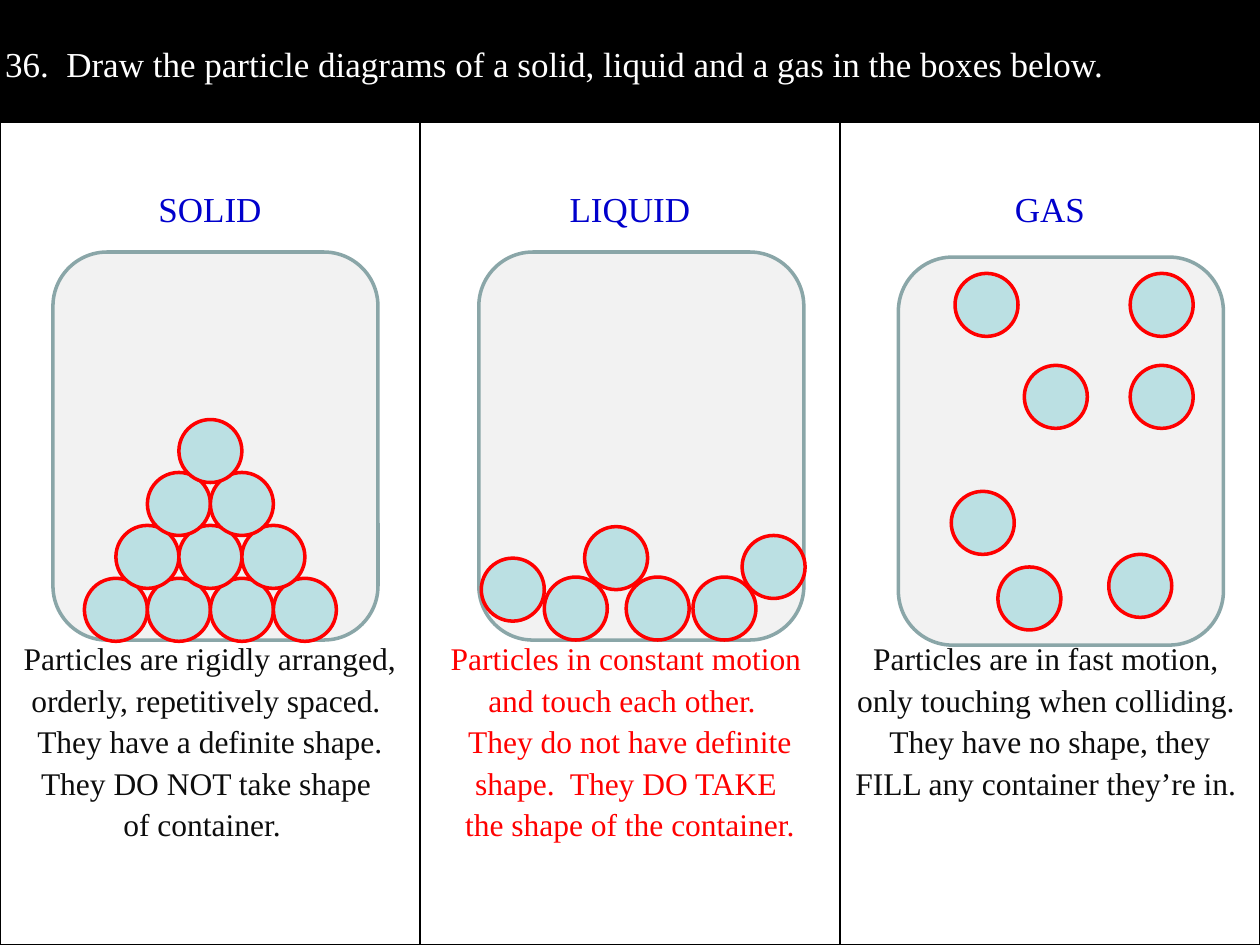
from dataclasses import dataclass

from lxml.etree import SubElement
from pptx import Presentation
from pptx.dml.color import RGBColor
from pptx.enum.shapes import MSO_SHAPE
from pptx.enum.text import MSO_ANCHOR, PP_ALIGN
from pptx.oxml.ns import qn
from pptx.util import Inches, Pt


@dataclass(frozen=True)
class Theme:
    """Colours, font and type sizes of the slide."""
    font: str = "Times New Roman"
    title_size: int = 20
    body_size: int = 18
    line_spacing: float = 1.19
    black: str = "000000"
    white: str = "FFFFFF"
    heading: str = "0000CC"
    body: str = "0D0D0D"
    accent: str = "FF0000"
    vessel_fill: str = "F2F2F2"
    vessel_line: str = "8AA6A8"
    particle_fill: str = "BBE0E3"


@dataclass(frozen=True)
class State:
    """One state of matter: its texts, vessel corner and particle offsets."""
    heading: str
    description: str
    color: str
    corner: tuple
    particles: list


THEME = Theme()
VESSEL_SIZE = (2.58, 3.08)
PARTICLE_SIZE = (0.5, 0.5)
QUESTION = "36.  Draw the particle diagrams of a solid, liquid and a gas in the boxes below."
PYRAMID = [(1 - 0.25 * row + 0.5 * column, 1.33 + 0.42 * row)
           for row in reversed(range(4)) for column in range(row + 1)]
STATES = [
    State("SOLID",
          "Particles are rigidly arranged, orderly, repetitively spaced.  "
          "They have a definite shape.\nThey DO NOT take shape \nof container.  ",
          THEME.body, (0.42, 2), PYRAMID),
    State("LIQUID",
          "Particles in constant motion \nand touch each other.  \n"
          "They do not have definite shape.  They DO TAKE \nthe shape of the container.",
          THEME.accent, (3.8, 2),
          [(0.84, 2.18), (1.17, 2.58), (0.52, 2.58), (0.02, 2.43), (2.09, 2.25), (1.7, 2.58)]),
    State("GAS",
          "Particles are in fast motion, \nonly touching when colliding.  "
          "They have no shape, they\nFILL any container they’re in. ",
          THEME.body, (7.13, 2.04),
          [(0.42, 1.86), (1.67, 2.36), (1.84, 0.86), (1, 0.86), (1.84, 0.13),
           (0.45, 0.13), (0.79, 2.46)]),
]


def add_outlined_shape(slide, kind, corner, size, fill, line):
    """Add a filled preset shape with a two-point outline."""
    shape = slide.shapes.add_shape(kind, *map(Inches, (*corner, *size)))
    shape.shadow.inherit = False
    shape.fill.solid()
    shape.fill.fore_color.rgb = RGBColor.from_string(fill)
    shape.line.color.rgb = RGBColor.from_string(line)
    shape.line.width = Pt(2)


def add_vessel(slide, corner):
    """Draw an empty container at the given corner."""
    add_outlined_shape(slide, MSO_SHAPE.ROUNDED_RECTANGLE, corner, VESSEL_SIZE,
                       THEME.vessel_fill, THEME.vessel_line)


def add_particles(slide, corner, offsets):
    """Draw particles at offsets from the corner of their vessel."""
    for left, top in offsets:
        add_outlined_shape(slide, MSO_SHAPE.OVAL, (corner[0] + left, corner[1] + top),
                           PARTICLE_SIZE, THEME.particle_fill, THEME.accent)


def style_paragraph(paragraph, text, size, color, alignment=PP_ALIGN.CENTER):
    """Fill a paragraph and set its type and spacing."""
    paragraph.text = text
    paragraph.alignment = alignment
    paragraph.line_spacing = THEME.line_spacing
    paragraph.space_after = Pt(6)
    paragraph.font.name = THEME.font
    paragraph.font.size = Pt(size)
    paragraph.font.bold = False
    paragraph.font.color.rgb = RGBColor.from_string(color)


def style_cell(cell):
    """Give a cell narrow margins, no fill and thin black borders."""
    cell.margin_left = cell.margin_right = Inches(0.04)
    cell.margin_top = cell.margin_bottom = Inches(0.04)
    properties = cell._tc.get_or_add_tcPr()
    for side in ("a:lnL", "a:lnR", "a:lnT", "a:lnB"):
        border = SubElement(properties, qn(side), w=str(Pt(1)))
        fill = SubElement(border, qn("a:solidFill"))
        SubElement(fill, qn("a:srgbClr"), val=THEME.black)
    cell.fill.background()


def fill_state_cell(cell, state):
    """Write a heading and, below the vessel, the description of a state."""
    cell.margin_top = Inches(0.49)
    frame = cell.text_frame
    style_paragraph(frame.paragraphs[0], state.heading, THEME.title_size, THEME.heading)
    description = frame.add_paragraph()
    style_paragraph(description, state.description, THEME.body_size, state.color)
    description.space_before = Pt(226)


def add_state_table(slide, left, top, width, height):
    """Add the question bar and one column for each state."""
    table = slide.shapes.add_table(2, len(STATES), left, top, width, height).table
    table.first_row = table.horz_banding = False
    table.rows[0].height = Inches(0.96)
    table.rows[1].height = height - Inches(0.96)
    for cell in table.iter_cells():
        style_cell(cell)
    question = table.cell(0, 0)
    question.merge(table.cell(0, len(STATES) - 1))
    question.fill.solid()
    question.fill.fore_color.rgb = RGBColor.from_string(THEME.black)
    question.vertical_anchor = MSO_ANCHOR.MIDDLE
    style_paragraph(question.text_frame.paragraphs[0], QUESTION, THEME.title_size,
                    THEME.white, PP_ALIGN.LEFT)
    for column, state in enumerate(STATES):
        fill_state_cell(table.cell(1, column), state)


def main():
    """Build the slide and save it."""
    presentation = Presentation()
    presentation.slide_width = Inches(10)
    presentation.slide_height = Inches(7.5)
    slide = presentation.slides.add_slide(presentation.slide_layouts[6])
    for state in STATES:
        add_vessel(slide, state.corner)
    add_state_table(slide, Inches(0), Inches(0.01), Inches(10), Inches(7.49))
    for state in STATES:
        add_particles(slide, state.corner, state.particles)
    presentation.save("out.pptx")


if __name__ == "__main__":
    main()
